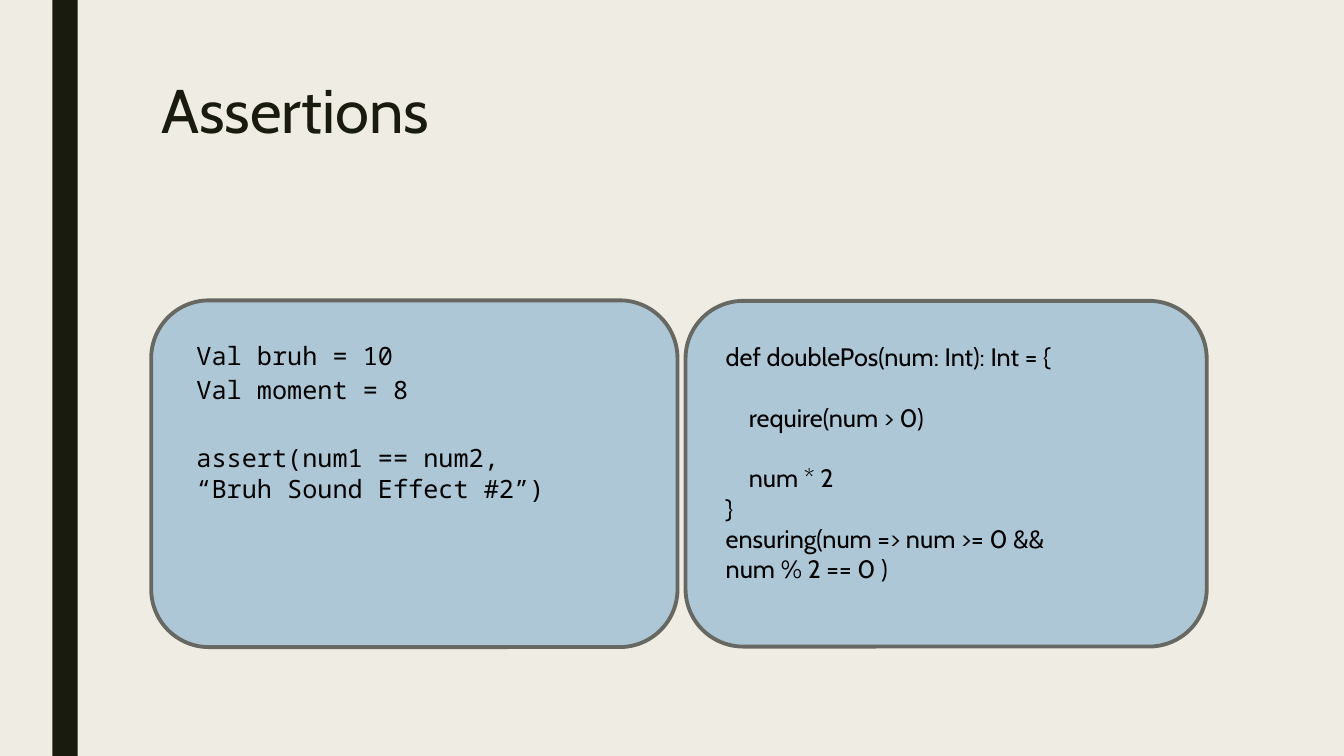
"""Builds the slide on assertions with two code cards."""
from pptx import Presentation, util as u
from pptx.dml.color import RGBColor
from pptx.enum import shapes, text

WIDTH, HEIGHT = 13.33, 7.5
COLUMN, ROW = WIDTH / 100, HEIGHT / 100
PAPER, INK, CARD, EDGE, CODE = "EFEDE3", "191B0E", "ADC7D6", "686863", "000000"
SANS, MONO = "Cabin", "Noto Sans Mono"
LINE_SKIP = 21.6
BODY_INDENT = 0.23

ASSERT_BLOCKS = [
    (44.4, 5.33, [("Val bruh = 10", 0, 0)]),
    (48.8, 5.33, [("Val moment = 8", 0, 0)]),
    (57.9, 9.5, [("assert(num1 == num2,", 0, 0),
                 ("“Bruh Sound Effect #2”)", 0, 0)]),
]
CONTRACT_LINES = [
    ("def doublePos(num: Int): Int = {", 0, 0),
    ("require(num > 0)", 1, 1),
    ("num * 2", 1, 1),
    ("}", 0, 0),
    ("ensuring(num => num >= 0 &&", 0, 0),
    ("num % 2 == 0 )", 0, 0),
]


def paint(color_format, hex_color):
    """Set a fill or font colour from a hex string."""
    color_format.rgb = RGBColor.from_string(hex_color)


def grid(left, top, width, height):
    """Turn hundredths of the slide into a box in EMU."""
    return (u.Inches(left * COLUMN), u.Inches(top * ROW),
            u.Inches(width * COLUMN), u.Inches(height * ROW))


def add_panel(slide, preset, box, fill, edge=None):
    """Add a filled shape, outlined when an edge colour is given."""
    panel = slide.shapes.add_shape(preset, *grid(*box))
    panel.shadow.inherit = False
    panel.fill.solid()
    paint(panel.fill.fore_color, fill)
    if edge:
        paint(panel.line.color, edge)
        panel.line.width = u.Pt(2.75)
    else:
        panel.line.fill.background()


def add_run(paragraph, words, font, size, color):
    """Append one formatted run to a paragraph."""
    run = paragraph.add_run()
    run.text = words
    run.font.name = font
    run.font.size = u.Pt(size)
    paint(run.font.color, color)


def add_code(slide, box, lines, font):
    """Add code lines, each given as words, indent level and lines skipped."""
    frame = slide.shapes.add_textbox(*grid(*box)).text_frame
    frame.word_wrap = True
    for number, (words, level, skipped) in enumerate(lines):
        paragraph = frame.add_paragraph() if number else frame.paragraphs[0]
        paragraph.space_before = u.Pt(skipped * LINE_SKIP)
        if level:
            indent = u.Inches(level * BODY_INDENT)
            paragraph._p.get_or_add_pPr().set("marL", str(indent))
        add_run(paragraph, words, font, 18, CODE)


def set_title(slide, words):
    """Place and format the title placeholder."""
    title = slide.shapes.title
    title.left, title.top, title.width, title.height = grid(11.25, 10, 78.77, 21.6)
    frame = title.text_frame
    frame.word_wrap = True
    frame.vertical_anchor = text.MSO_ANCHOR.TOP
    heading = frame.paragraphs[0]
    heading.alignment = text.PP_ALIGN.LEFT
    heading.line_spacing = 0.89
    add_run(heading, words, SANS, 44, INK)


def main():
    """Build and save the slide."""
    deck = Presentation()
    deck.slide_width, deck.slide_height = u.Inches(WIDTH), u.Inches(HEIGHT)
    slide = deck.slides.add_slide(deck.slide_layouts[5])
    slide.background.fill.solid()
    paint(slide.background.fill.fore_color, PAPER)

    rectangle = shapes.MSO_SHAPE.RECTANGLE
    rounded = shapes.MSO_SHAPE.ROUNDED_RECTANGLE
    add_panel(slide, rectangle, (3.9, 0, 1.88, 100), INK)
    set_title(slide, "Assertions")

    add_panel(slide, rounded, (11.25, 39.73, 39.16, 45.87), CARD, EDGE)
    for top, height, lines in ASSERT_BLOCKS:
        add_code(slide, (13.88, top, 34.81, height), lines, MONO)

    add_panel(slide, rounded, (51.01, 39.8, 38.78, 45.73), CARD, EDGE)
    add_code(slide, (53.26, 44.53, 34.73, 33.6), CONTRACT_LINES, SANS)

    deck.save("out.pptx")


if __name__ == "__main__":
    main()
